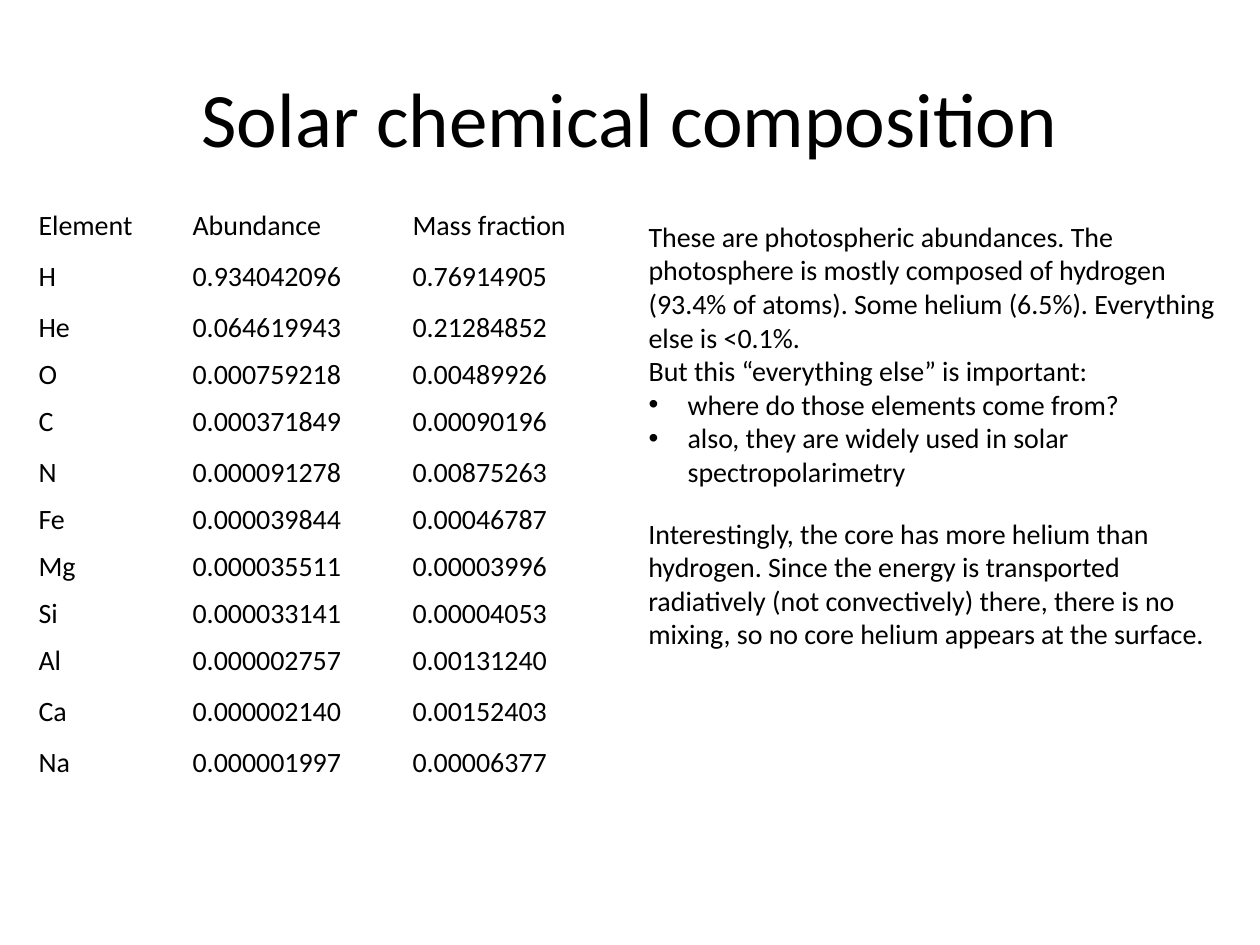
import pptx
import pptx.dml.color
import pptx.enum.text
import pptx.util
from pptx.oxml.ns import qn

BLACK = pptx.dml.color.RGBColor(0, 0, 0)
FONT = "Calibri"
EMU_PER_PX = 914400 / 126

TITLE = "Solar chemical composition"
COLUMN_WIDTHS = (154, 220, 236)
TALL_ROW, SHORT_ROW = 51, 47
SHORT_ELEMENTS = {"He", "O", "N", "Fe", "Mg", "Si"}
ABUNDANCES = (
    ("Element", "Abundance", "Mass fraction"),
    ("H", "0.934042096", "0.76914905"),
    ("He", "0.064619943", "0.21284852"),
    ("O", "0.000759218", "0.00489926"),
    ("C", "0.000371849", "0.00090196"),
    ("N", "0.000091278", "0.00875263"),
    ("Fe", "0.000039844", "0.00046787"),
    ("Mg", "0.000035511", "0.00003996"),
    ("Si", "0.000033141", "0.00004053"),
    ("Al", "0.000002757", "0.00131240"),
    ("Ca", "0.000002140", "0.00152403"),
    ("Na", "0.000001997", "0.00006377"),
)
PHOTOSPHERE = (
    ("These are photospheric abundances. The photosphere is mostly composed of "
     "hydrogen (93.4% of atoms). Some helium (6.5%). Everything else is <0.1%.", False),
    ("But this “everything else” is important:", False),
    ("where do those elements come from?", True),
    ("also, they are widely used in solar spectropolarimetry", True),
)
CORE = (
    ("Interestingly, the core has more helium than hydrogen. Since the energy is "
     "transported radiatively (not convectively) there, there is no mixing, so no "
     "core helium appears at the surface.", False),
)


def px(length):
    return pptx.util.Emu(round(length * EMU_PER_PX))


def place(shape, left, top, width, height):
    shape.left, shape.top = px(left), px(top)
    shape.width, shape.height = px(width), px(height)


def add_span(para, text, size=16):
    span = para.add_run()
    span.text = text
    span.font.name = FONT
    span.font.size = pptx.util.Pt(size)
    span.font.color.rgb = BLACK


def set_bullet(para, bulleted):
    properties = para._p.get_or_add_pPr()
    indent = px(39) if bulleted else 0
    properties.set("marL", str(indent))
    properties.set("indent", str(-indent))
    if bulleted:
        font = properties.makeelement(qn("a:buFont"), {"typeface": "Arial"})
        bullet = properties.makeelement(qn("a:buChar"), {"char": "•"})
        properties.extend((font, bullet))
    else:
        properties.append(properties.makeelement(qn("a:buNone"), {}))


def fill_title(page):
    title = page.shapes.title
    place(title, 63, 38, 1134, 158)
    frame = title.text_frame
    frame.vertical_anchor = pptx.enum.text.MSO_ANCHOR.MIDDLE
    para = frame.paragraphs[0]
    para.alignment = pptx.enum.text.PP_ALIGN.CENTER
    add_span(para, TITLE, 44)


def fill_text(box, lines):
    frame = box.text_frame
    frame.word_wrap = True
    frame.auto_size = pptx.enum.text.MSO_AUTO_SIZE.NONE
    frame.vertical_anchor = pptx.enum.text.MSO_ANCHOR.TOP
    for index, (text, bulleted) in enumerate(lines):
        para = frame.add_paragraph() if index else frame.paragraphs[0]
        para.space_before = pptx.util.Pt(0)
        set_bullet(para, bulleted)
        add_span(para, text)


def add_abundance_table(page):
    heights = [SHORT_ROW if row[0] in SHORT_ELEMENTS | {"C", "Al"} - {"C", "Al"}
               else TALL_ROW for row in ABUNDANCES]
    heights = [SHORT_ROW if row[0] in SHORT_ELEMENTS else TALL_ROW for row in ABUNDANCES]
    table = page.shapes.add_table(
        len(ABUNDANCES), len(COLUMN_WIDTHS),
        px(26), px(203), px(sum(COLUMN_WIDTHS)), px(sum(heights))).table
    table.first_row = False
    table.horz_banding = False
    for column, width in zip(table.columns, COLUMN_WIDTHS):
        column.width = px(width)
    for row, height, values in zip(table.rows, heights, ABUNDANCES):
        row.height = px(height)
        for cell, value in zip(row.cells, values):
            cell.fill.background()
            add_span(cell.text_frame.paragraphs[0], value)


def main():
    deck = pptx.Presentation()
    deck.slide_width, deck.slide_height = px(1260), px(945)
    page = deck.slides.add_slide(deck.slide_layouts[1])
    fill_title(page)
    add_abundance_table(page)
    body = page.placeholders[1]
    place(body, 636, 213, 604, 285)
    fill_text(body, PHOTOSPHERE)
    core_box = page.shapes.add_textbox(px(636), px(510), px(604), px(149))
    fill_text(core_box, CORE)
    deck.save("out.pptx")


if __name__ == "__main__":
    main()
